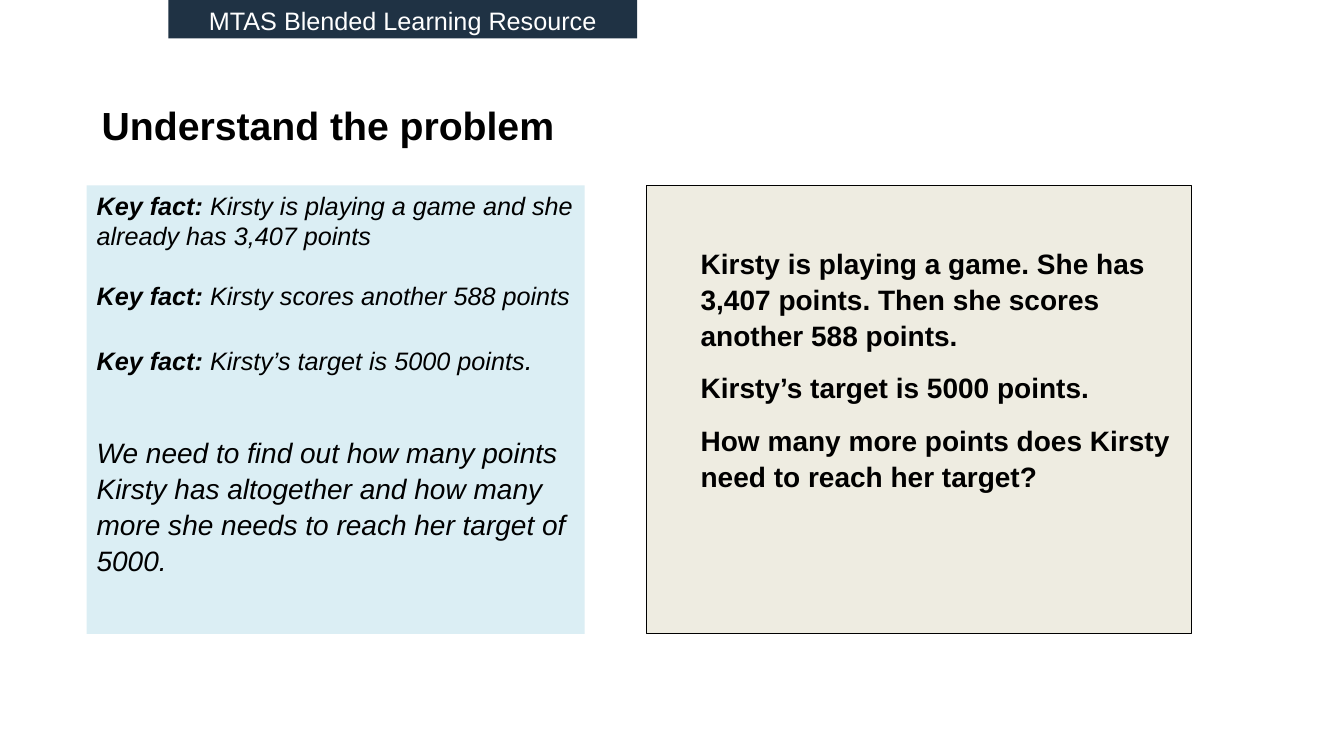
import pptx
import pptx.util
import pptx.dml.color
import pptx.enum.shapes
import pptx.enum.text

Pt, Inches = pptx.util.Pt, pptx.util.Inches
ALIGN = pptx.enum.text.PP_ALIGN
ANCHOR = pptx.enum.text.MSO_ANCHOR
INK, WHITE, NAVY, PALE_BLUE, CREAM = "000000", "FFFFFF", "1F3244", "DBEEF4", "EEECE1"


def colour(hex_code):
    return pptx.dml.color.RGBColor.from_string(hex_code)


class ProblemSlide:
    """Holds the style and the slide; areas are percent of slide width and height."""

    font = "Arial"

    def __init__(self, deck):
        self.width, self.height = deck.slide_width, deck.slide_height
        self.slide = deck.slides.add_slide(deck.slide_layouts[6])

    def place(self, left, top, width, height):
        return (int(self.width * left / 100), int(self.height * top / 100),
                int(self.width * width / 100), int(self.height * height / 100))

    def heading(self, area, text, size):
        frame = self.slide.shapes.add_textbox(*self.place(*area)).text_frame
        frame.word_wrap = True
        frame.vertical_anchor = ANCHOR.MIDDLE
        self.fill_paragraph(frame.paragraphs[0], [(text, size, True, False)])

    def panel(self, area, fill, outline=None):
        """Adds a filled rectangle and returns its text frame."""
        panel = self.slide.shapes.add_shape(
            pptx.enum.shapes.MSO_SHAPE.RECTANGLE, *self.place(*area))
        panel.shadow.inherit = False
        panel.fill.solid()
        panel.fill.fore_color.rgb = colour(fill)
        if outline:
            panel.line.color.rgb = colour(outline)
            panel.line.width = Pt(0.75)
        else:
            panel.line.fill.background()
        frame = panel.text_frame
        frame.word_wrap = True
        frame.vertical_anchor = ANCHOR.TOP
        return frame

    def fill_paragraph(self, paragraph, pieces, ink=INK, align=ALIGN.LEFT,
                       before=0, spacing=1.0):
        """Fills a paragraph with (text, size, bold, italic) pieces."""
        paragraph.alignment = align
        paragraph.line_spacing = spacing
        paragraph.space_before = Pt(before)
        for text, size, bold, italic in pieces:
            run = paragraph.add_run()
            run.text = text
            run.font.name = self.font
            run.font.size = Pt(size)
            run.font.bold, run.font.italic = bold, italic
            run.font.color.rgb = colour(ink)

    def paragraphs(self, frame, entries):
        """Adds (pieces, space before, line spacing) entries in order."""
        for index, (pieces, before, spacing) in enumerate(entries):
            paragraph = frame.add_paragraph() if index else frame.paragraphs[0]
            self.fill_paragraph(paragraph, pieces, before=before, spacing=spacing)


def key_fact(text):
    return [("Key fact: ", 18, True, True), (text, 18, False, True)]


def main():
    deck = pptx.Presentation()
    deck.slide_width, deck.slide_height = Inches(13.33), Inches(7.5)
    page = ProblemSlide(deck)
    panel_top, panel_height = 24.53, 59.33

    page.heading((6.83, 12.27, 67.5, 8.53), "Understand the problem", 28)

    facts = page.panel((6.45, panel_top, 37.05, panel_height), PALE_BLUE)
    goal = ("We need to find out how many points Kirsty has altogether and how many "
            "more she needs to reach her target of 5000.")
    page.paragraphs(facts, [
        (key_fact("Kirsty is playing a game and she already has 3,407 points"), 0, 1.0),
        (key_fact("Kirsty scores another 588 points"), 21, 1.0),
        (key_fact("Kirsty’s target is 5000 points") + [(".", 20, False, True)], 21, 1.07),
        ([(goal, 20, False, True)], 41, 1.07),
    ])

    banner = page.panel((12.53, 0, 34.88, 5.07), NAVY)
    page.fill_paragraph(banner.paragraphs[0],
                        [("MTAS Blended Learning Resource", 18, False, False)],
                        ink=WHITE, align=ALIGN.CENTER)

    problem = page.panel((48.08, panel_top, 40.58, panel_height), CREAM, INK)
    problem.margin_left, problem.margin_top = Inches(0.54), Inches(0.58)
    sentences = [
        "Kirsty is playing a game. She has 3,407 points. Then she scores another 588 points.",
        "Kirsty’s target is 5000 points.",
        "How many more points does Kirsty need to reach her target?",
    ]
    page.paragraphs(problem, [
        ([(sentence, 20, True, False)], 12 if index else 0, 1.07)
        for index, sentence in enumerate(sentences)
    ])

    deck.save("out.pptx")


if __name__ == "__main__":
    main()
